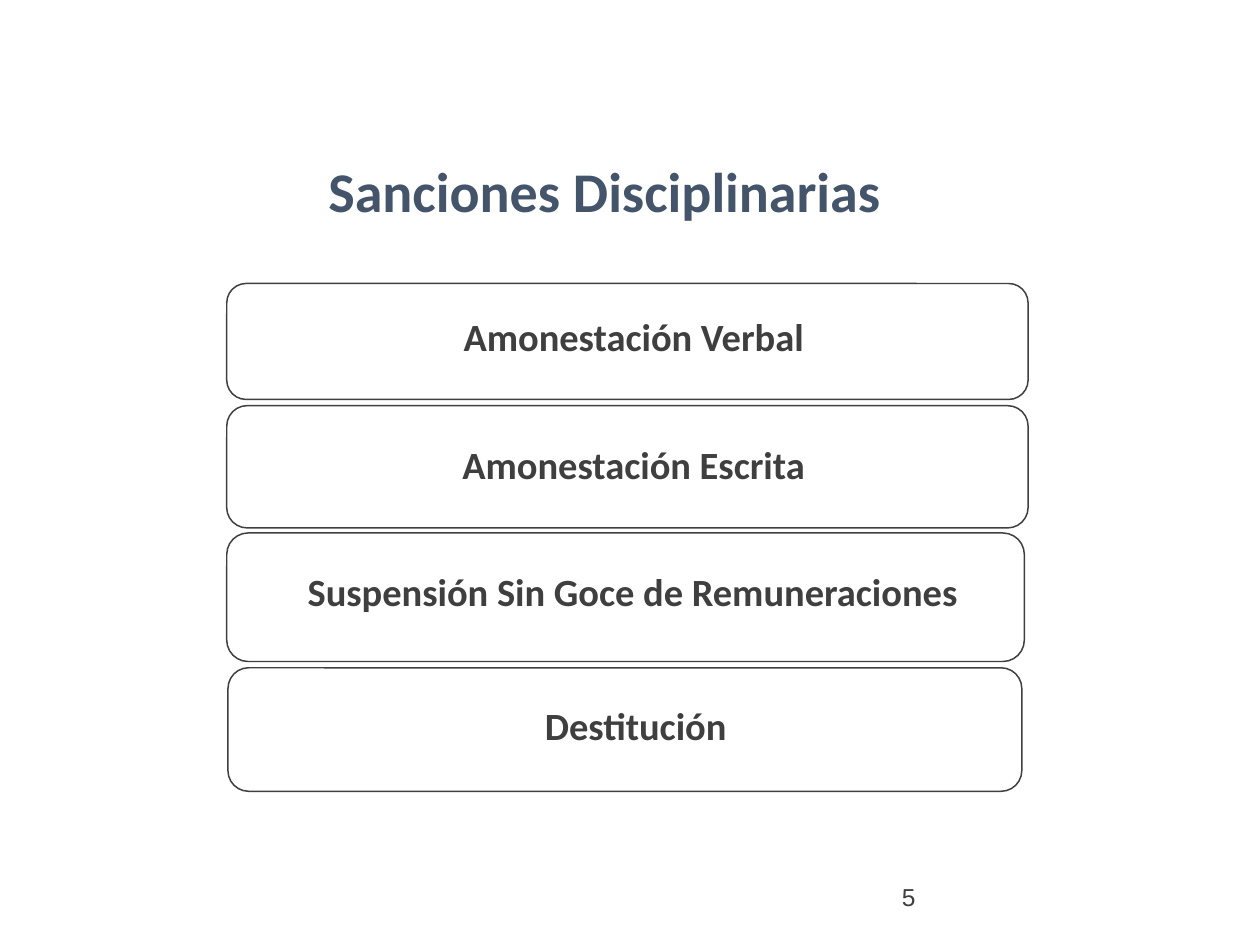
import pptx
import pptx.dml.color
import pptx.enum.shapes
import pptx.enum.text
import pptx.util
from dataclasses import dataclass
from pptx.util import Inches


@dataclass(frozen=True)
class Theme:
    heading: str = "44546A"
    ink: str = "3F3F3F"
    paper: str = "FFFFFF"
    font: str = "Calibri"
    number_font: str = "Arial"
    title_size: float = 32
    sanction_size: float = 22
    number_size: float = 14
    outline: float = 0.85


theme = Theme()
rgb = pptx.dml.color.RGBColor.from_string
center = pptx.enum.text.PP_ALIGN.CENTER
middle = pptx.enum.text.MSO_ANCHOR.MIDDLE


def add_text(shapes, bounds, wording, size, color, font=theme.font, bold=True):
    """Add a one-line text box and return its text frame."""
    frame = shapes.add_textbox(*map(Inches, bounds)).text_frame
    frame.word_wrap = True
    run = frame.paragraphs[0].add_run()
    run.text = wording
    run.font.name = font
    run.font.size = pptx.util.Pt(size)
    run.font.bold = bold
    run.font.color.rgb = rgb(color)
    return frame


deck = pptx.Presentation()
deck.slide_width = Inches(10)
deck.slide_height = Inches(7.5)
slide = deck.slides.add_slide(deck.slide_layouts[6])

add_text(slide.shapes, (7.06, 6.95, 2.25, 0.4), "5", theme.number_size,
         theme.ink, theme.number_font, bold=False)

title = add_text(slide.shapes, (0.59, 1.23, 8.42, 0.55),
                 "Sanciones Disciplinarias", theme.title_size, theme.heading)
title.vertical_anchor = middle
title.paragraphs[0].alignment = center

# Each sanction: wording, bounds of the card, bounds of its label
sanctions = [
    ("Amonestación Verbal", (1.8, 2.25, 6.36, 0.92), (1.91, 2.3, 6.24, 0.78)),
    ("Amonestación Escrita", (1.8, 3.22, 6.36, 0.97), (1.91, 3.27, 6.24, 0.87)),
    ("Suspensión Sin Goce de Remuneraciones",
     (1.8, 4.23, 6.33, 1.02), (1.91, 4.28, 6.22, 0.87)),
    ("Destitución", (1.81, 5.3, 6.3, 0.98), (1.95, 5.36, 6.19, 0.83)),
]
for wording, card_bounds, label_bounds in sanctions:
    sanction = slide.shapes.add_group_shape()
    card = sanction.shapes.add_shape(
        pptx.enum.shapes.MSO_SHAPE.ROUNDED_RECTANGLE, *map(Inches, card_bounds))
    card.shadow.inherit = False
    card.fill.solid()
    card.fill.fore_color.rgb = rgb(theme.paper)
    card.line.color.rgb = rgb(theme.ink)
    card.line.width = pptx.util.Pt(theme.outline)

    label = add_text(sanction.shapes, label_bounds, wording,
                     theme.sanction_size, theme.ink)
    label.vertical_anchor = middle
    label.margin_left = label.margin_right = Inches(0.05)
    label.margin_top = label.margin_bottom = Inches(0.05)
    label.paragraphs[0].alignment = center
    label.paragraphs[0].line_spacing = 0.9

deck.save("out.pptx")
